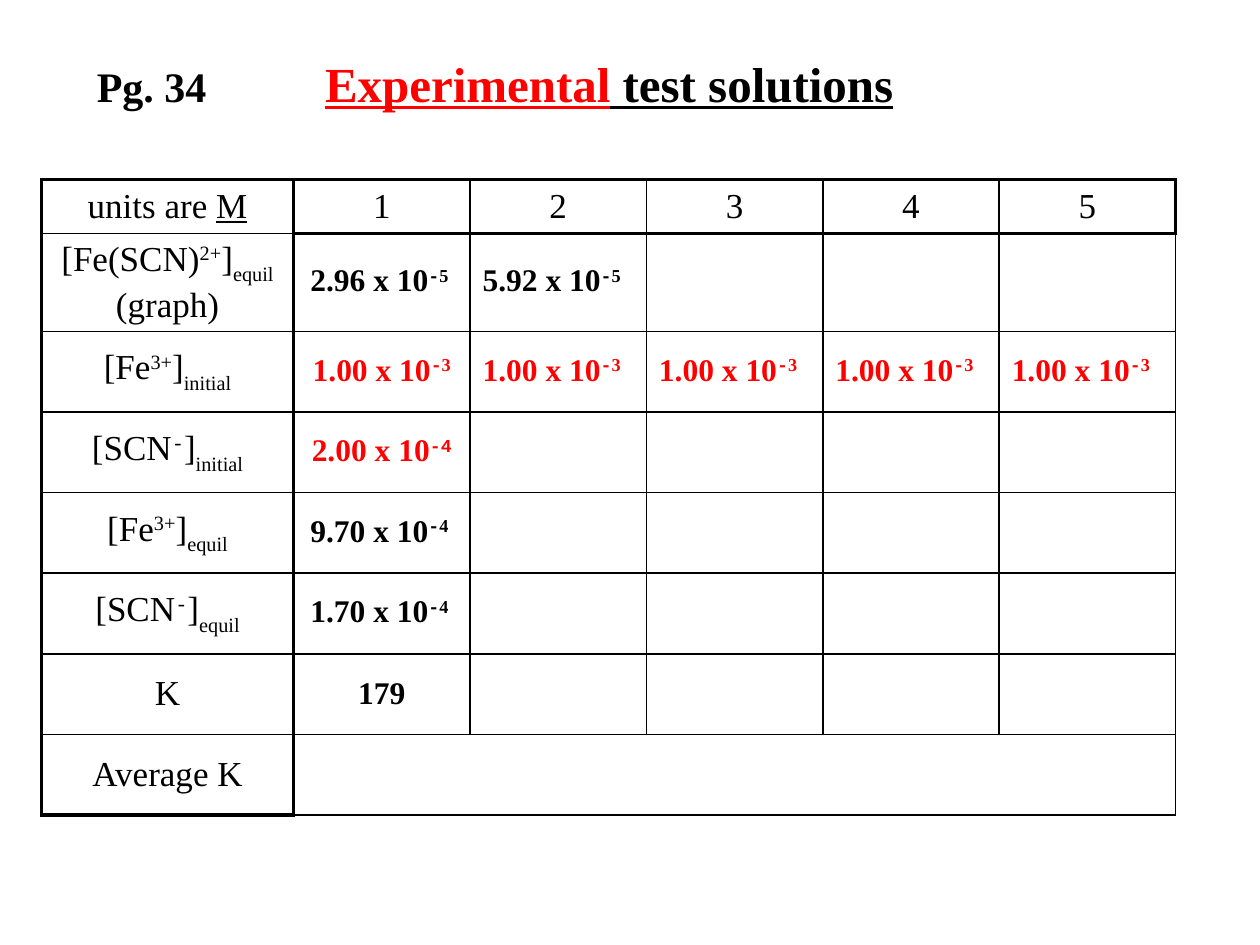
from typing import NamedTuple

from lxml import etree
from pptx import Presentation
from pptx import util as u
from pptx.dml import color
from pptx.enum import text
from pptx.oxml import ns

COLORS = {"ink": "000000", "given": "FF0000"}
SERIF, MONO = "Times New Roman", "Courier New"
WIDTH, HEIGHT = u.Inches(10), u.Inches(7.5)
COLUMN_WIDTHS = [2] + [1.4] * 5
ROW_HEIGHTS = [0.43, 0.77] + [0.64] * 6
LAST_ROW, LAST_COLUMN = len(ROW_HEIGHTS) - 1, len(COLUMN_WIDTHS) - 1
THIN, THICK = 1, 2


class Span(NamedTuple):
    text: str
    baseline: int = 0
    font: str = SERIF
    underline: bool = False
    color: str = "ink"


class Entry(NamedTuple):
    spans: list[Span]
    size: int = 20
    bold: bool = False
    centered: bool = True


def ion(name: str, charge: str, stage: str, note: str = "") -> Entry:
    """Row label: a bracketed ion with its charge raised and its stage lowered."""
    charge_font = MONO if charge == "-" else SERIF
    spans = [Span(f"[{name}"), Span(charge, 30, charge_font), Span("]"), Span(stage, -30)]
    return Entry(spans + ([Span(note)] if note else []))


def power(mantissa: str, exponent: str, ink: str = "ink", centered: bool = True,
          exponent_font: str = SERIF) -> Entry:
    """Measured value in scientific notation with a negative exponent."""
    base = Span(f"{mantissa} x 10", color=ink)
    if exponent_font == MONO:
        raised = [Span(f"-{exponent}", 30, MONO, color=ink)]
    else:
        raised = [Span("-", 30, MONO, color=ink), Span(exponent, 30, color=ink)]
    return Entry([base] + raised, 18, True, centered)


ROWS: list[list[Entry]] = [
    [Entry([Span("units are "), Span("M", underline=True)])]
    + [Entry([Span(str(number))]) for number in range(1, 6)],
    [ion("Fe(SCN)", "2+", "equil", " (graph)"), power("2.96", "5 "),
     power("5.92", "5", centered=False)],
    [ion("Fe", "3+", "initial")]
    + [power("1.00", "3", "given", column == 1) for column in range(1, 6)],
    [ion("SCN", "-", "initial"), power("2.00", "4", "given", exponent_font=MONO)],
    [ion("Fe", "3+", "equil"), power("9.70", "4 ")],
    [ion("SCN", "-", "equil"), power("1.70", "4 ")],
    [Entry([Span("K")]), Entry([Span("179")], 18, True)],
    [Entry([Span("Average K")])],
]


def write(para, entry: Entry) -> None:
    para.alignment = text.PP_ALIGN.CENTER if entry.centered else text.PP_ALIGN.LEFT
    for span in entry.spans:
        run = para.add_run()
        run.text = span.text
        run.font.name = span.font
        run.font.size = u.Pt(entry.size)
        run.font.bold = entry.bold
        run.font.underline = span.underline
        run.font.color.rgb = color.RGBColor.from_string(COLORS[span.color])
        if span.baseline:
            run.font._element.set("baseline", str(span.baseline * 1000))


def border_widths(row: int, column: int) -> dict[str, int]:
    """Heavy rules frame the label column and the header row."""
    label, header = column == 0, row == 0
    heavy = {
        "L": column <= 1,
        "R": label or (header and column == LAST_COLUMN),
        "T": header or (row == 1 and not label),
        "B": (header and not label) or (label and row == LAST_ROW),
    }
    return {side: THICK if is_heavy else THIN for side, is_heavy in heavy.items()}


def draw_borders(cell, widths: dict[str, int]) -> None:
    properties = cell._tc.get_or_add_tcPr()
    for side, width in widths.items():
        line = etree.SubElement(properties, ns.qn(f"a:ln{side}"), w=str(u.Pt(width)))
        fill = etree.SubElement(line, ns.qn("a:solidFill"))
        etree.SubElement(fill, ns.qn("a:srgbClr"), val=COLORS["ink"])


def add_results(page) -> None:
    frame = page.shapes.add_table(
        len(ROW_HEIGHTS), len(COLUMN_WIDTHS), int(WIDTH * 0.033), int(HEIGHT * 0.19),
        u.Inches(sum(COLUMN_WIDTHS)), u.Inches(sum(ROW_HEIGHTS)))
    table = frame.table
    table.first_row = table.horz_banding = False
    for column, width in zip(table.columns, COLUMN_WIDTHS):
        column.width = u.Inches(width)
    for row, height in zip(table.rows, ROW_HEIGHTS):
        row.height = u.Inches(height)
    table.cell(LAST_ROW, 1).merge(table.cell(LAST_ROW, LAST_COLUMN))

    for row, entries in enumerate(ROWS):
        for column in range(len(COLUMN_WIDTHS)):
            cell = table.cell(row, column)
            if cell.is_spanned:
                continue
            draw_borders(cell, border_widths(row, column))
            cell.fill.background()
            cell.vertical_anchor = text.MSO_ANCHOR.MIDDLE
            if column < len(entries):
                write(cell.text_frame.paragraphs[0], entries[column])


def add_title(page) -> None:
    title = page.shapes.title
    title.left, title.top = int(WIDTH * 0.258), int(HEIGHT * 0.056)
    title.width, title.height = int(WIDTH * 0.525), int(HEIGHT * 0.063)
    frame = title.text_frame
    frame.margin_left = frame.margin_right = frame.margin_top = frame.margin_bottom = 0
    frame.vertical_anchor = text.MSO_ANCHOR.MIDDLE
    frame.auto_size = text.MSO_AUTO_SIZE.NONE
    write(frame.paragraphs[0], Entry([
        Span("Experimental", underline=True, color="given"),
        Span(" test solutions", underline=True),
    ], 28, True, False))


def add_page_reference(page) -> None:
    box = page.shapes.add_textbox(int(WIDTH * 0.067), int(HEIGHT * 0.057),
                                  int(WIDTH * 0.108), int(HEIGHT * 0.067))
    box.text_frame.word_wrap = True
    write(box.text_frame.paragraphs[0], Entry([Span("Pg. 34")], 24, True, False))


def main() -> None:
    deck = Presentation()
    deck.slide_width, deck.slide_height = WIDTH, HEIGHT
    page = deck.slides.add_slide(deck.slide_layouts.get_by_name("Title Only"))
    add_results(page)
    add_title(page)
    add_page_reference(page)
    deck.save("out.pptx")


if __name__ == "__main__":
    main()
